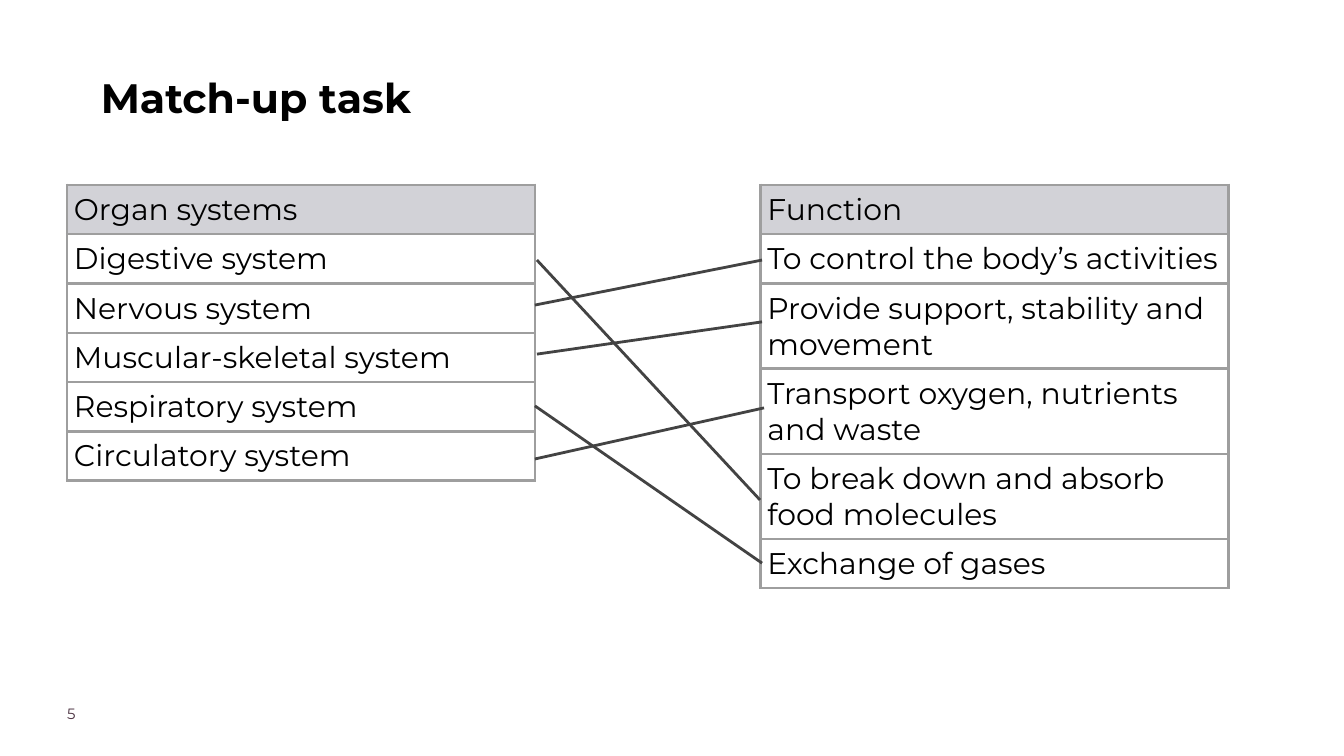
"""Build the match-up slide that links organ systems to their functions."""
from lxml.etree import SubElement
from pptx import Presentation
from pptx.dml.color import RGBColor
from pptx.enum.shapes import MSO_CONNECTOR
from pptx.oxml.ns import qn
from pptx.util import Inches, Pt

BLACK = RGBColor(0x00, 0x00, 0x00)
BROWN = RGBColor(0x4B, 0x32, 0x41)
HEADER_GREY = RGBColor(0xD2, 0xD2, 0xD7)
BORDER_GREY = RGBColor(0x9E, 0x9E, 0x9E)
LINE_GREY = RGBColor(0x43, 0x43, 0x43)

COLUMN_WIDTH = 6.96
ROW_HEIGHT = 0.42
TABLE_TOP = 2.75

TABLES = [
    (1, ["Organ systems", "Digestive system", "Nervous system",
         "Muscular-skeletal system", "Respiratory system", "Circulatory system"]),
    (11.32, ["Function", "To control the body’s activities",
             "Provide support, stability and movement",
             "Transport oxygen, nutrients and waste",
             "To break down and absorb food molecules", "Exchange of gases"]),
]
MATCHES = [
    (7.99, 3.87, 11.31, 7.44),
    (7.96, 4.54, 11.34, 3.87),
    (7.99, 5.27, 11.34, 4.79),
    (7.96, 6.04, 11.34, 8.38),
    (7.96, 6.83, 11.37, 6.07),
]


def style_font(paragraph, size, color, bold=False):
    font = paragraph.font
    font.name, font.size, font.bold = "Montserrat", Pt(size), bold
    font.color.rgb = color


def add_text(page, text, left, top, width, height, size, color, bold=False):
    frame = page.shapes.add_textbox(
        Inches(left), Inches(top), Inches(width), Inches(height)).text_frame
    frame.word_wrap = True
    frame.margin_left = frame.margin_right = frame.margin_top = frame.margin_bottom = 0
    paragraph = frame.paragraphs[0]
    paragraph.text = text
    style_font(paragraph, size, color, bold)
    return paragraph


deck = Presentation()
deck.slide_width, deck.slide_height = Inches(20), Inches(11.25)
page = deck.slides.add_slide(deck.slide_layouts[6])

title = add_text(page, "Match-up task", 1, 0.97, 14.44, 1.78, 44, BLACK, True)
title.line_spacing = 1.15
title._p.get_or_add_pPr().set("indent", str(Inches(0.5)))
add_text(page, "5", 1, 10.48, 1.57, 0.39, 16, BROWN)

for left, entries in TABLES:
    table = page.shapes.add_table(
        len(entries), 1, Inches(left), Inches(TABLE_TOP),
        Inches(COLUMN_WIDTH), Inches(ROW_HEIGHT * len(entries))).table
    table.first_row = table.horz_banding = False
    for index, entry in enumerate(entries):
        table.rows[index].height = Inches(ROW_HEIGHT)
        cell = table.cell(index, 0)
        cell.text = entry
        cell.margin_left = cell.margin_right = Inches(0.1)
        cell.margin_top = cell.margin_bottom = Inches(0.1)
        style_font(cell.text_frame.paragraphs[0], 32, BLACK)
        properties = cell._tc.get_or_add_tcPr()
        for side in ("lnL", "lnR", "lnT", "lnB"):
            border = SubElement(properties, qn(f"a:{side}"), w=str(Pt(3)))
            fill = SubElement(border, qn("a:solidFill"))
            SubElement(fill, qn("a:srgbClr"), val=str(BORDER_GREY))
        if index == 0:
            cell.fill.solid()
            cell.fill.fore_color.rgb = HEADER_GREY
        else:
            cell.fill.background()

for match in MATCHES:
    connector = page.shapes.add_connector(
        MSO_CONNECTOR.STRAIGHT, *(Inches(value) for value in match))
    connector.line.color.rgb = LINE_GREY
    connector.line.width = Pt(3)
    SubElement(connector._element.spPr, qn("a:effectLst"))

deck.save("out.pptx")
